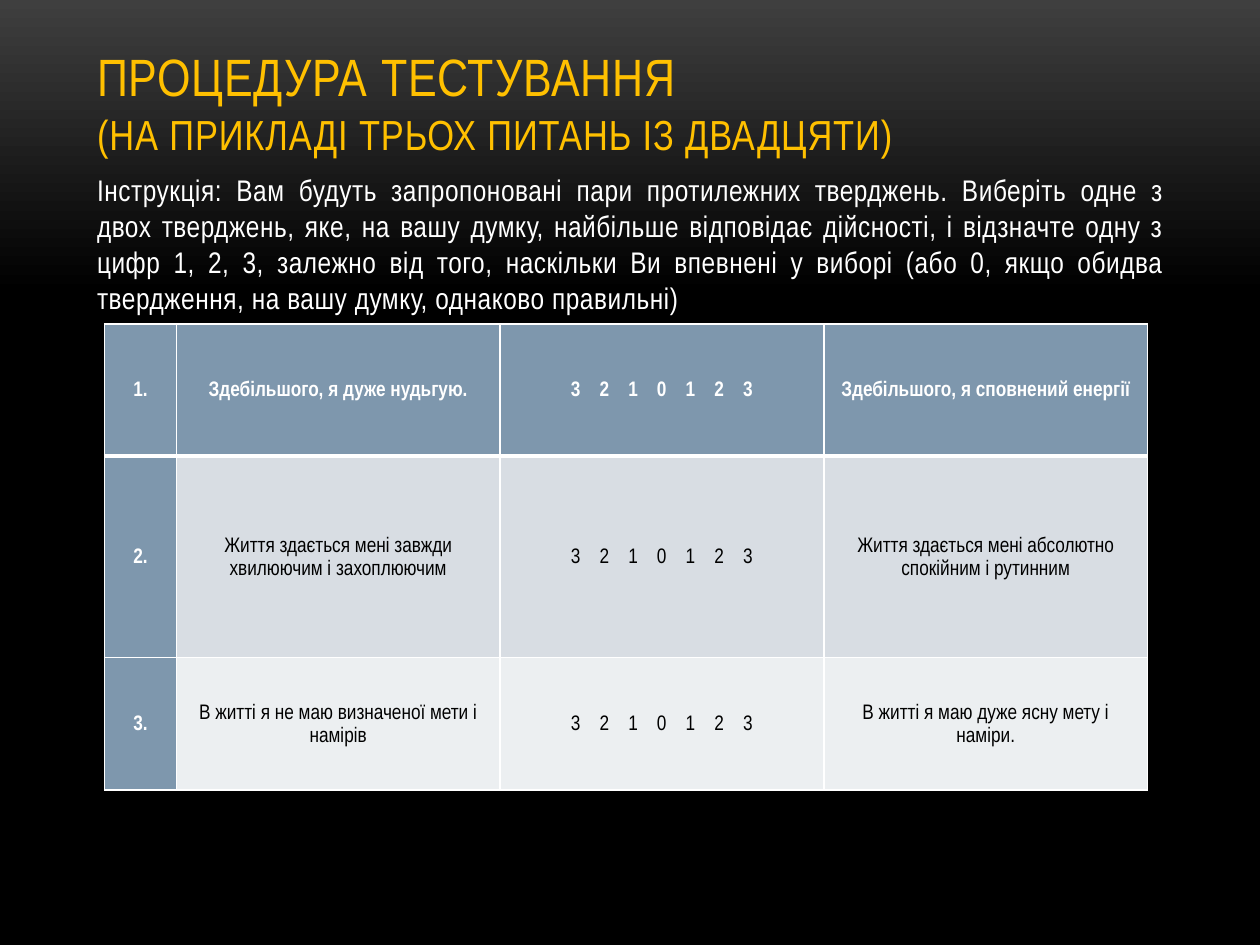
from copy import deepcopy
from dataclasses import dataclass

from lxml.etree import SubElement
from pptx import Presentation
from pptx.dml.color import RGBColor
from pptx.enum.text import MSO_ANCHOR as Anchor, MSO_AUTO_SIZE as AutoSize, PP_ALIGN as Align
from pptx.oxml.ns import qn
from pptx.util import Inches, Pt

GOLD = RGBColor(0xFF, 0xC0, 0x00)
WHITE = RGBColor(0xFF, 0xFF, 0xFF)
BLACK = RGBColor(0x00, 0x00, 0x00)
CHARCOAL = RGBColor(0x3F, 0x3F, 0x3F)
STEEL = RGBColor(0x7E, 0x97, 0xAD)
MIST = RGBColor(0xD8, 0xDD, 0xE3)
PALE = RGBColor(0xEC, 0xEF, 0xF1)

FONT = "Arial Narrow"
SCALE = "3 2 1 0 1 2 3"
SCALE_SPACING = 4.1
NUMBER_WIDTH = 0.57
STATEMENT_WIDTH = 2.57
INSTRUCTION = (
    "Інструкція: Вам будуть запропоновані пари протилежних тверджень. "
    "Виберіть одне з двох тверджень, яке, на вашу думку, найбільше відповідає "
    "дійсності, і відзначте одну з цифр 1, 2, 3, залежно від того, наскільки Ви "
    "впевнені у виборі (або 0, якщо обидва твердження, на вашу думку, однаково правильні)"
)


@dataclass(frozen=True)
class Question:
    number: str
    left: str
    right: str
    height: float
    fill: RGBColor


QUESTIONS = [
    Question("1.", "Здебільшого, я дуже нудьгую.", "Здебільшого, я сповнений енергії", 1.05, STEEL),
    Question("2.", "Життя здається мені завжди хвилюючим і захоплюючим",
             "Життя здається мені абсолютно спокійним і рутинним", 1.6, MIST),
    Question("3.", "В житті я не маю визначеної мети і намірів",
             "В житті я маю дуже ясну мету і наміри.", 1.05, PALE),
]


def apply(target, values: dict) -> None:
    for name, value in values.items():
        setattr(target, name, value)


def add_run(paragraph, text: str, size: float, color: RGBColor,
            bold: bool = False, spacing: float = 0) -> None:
    run = paragraph.add_run()
    run.text = text
    apply(run.font, {"name": FONT, "size": Pt(size), "bold": bold})
    run.font.color.rgb = color
    if spacing:
        run.font._element.set("spc", str(round(spacing * 100)))


def place(placeholder, left: float, top: float, width: float, height: float, anchor: Anchor):
    apply(placeholder, {"left": Inches(left), "top": Inches(top),
                        "width": Inches(width), "height": Inches(height)})
    apply(placeholder.text_frame, {"auto_size": AutoSize.NONE, "word_wrap": True,
                                   "vertical_anchor": anchor})
    return placeholder.text_frame.paragraphs[0]


def paint_background(slide) -> None:
    fill = slide.background.fill
    fill.gradient()
    fill.gradient_angle = 270
    for stop, color, position in zip(fill.gradient_stops, (CHARCOAL, BLACK), (0, 0.31)):
        stop.color.rgb = color
        stop.position = position
    stops = slide.element.find(".//" + qn("a:gsLst"))
    last_stop = deepcopy(stops[-1])
    last_stop.set("pos", "100000")
    stops.append(last_stop)


def add_borders(cell, top: float, bottom: float) -> None:
    properties = cell._tc.get_or_add_tcPr()
    for side, width in {"L": 1, "R": 1, "T": top, "B": bottom}.items():
        line = SubElement(properties, qn(f"a:ln{side}"), w=str(Pt(width)))
        SubElement(SubElement(line, qn("a:solidFill")), qn("a:srgbClr"), val=str(WHITE))


def fill_cell(cell, text: str, fill: RGBColor, top: float, bottom: float) -> None:
    add_borders(cell, top, bottom)
    apply(cell, {"margin_left": Inches(0.07), "margin_right": Inches(0.07),
                 "margin_top": 0, "margin_bottom": 0, "vertical_anchor": Anchor.MIDDLE})
    cell.fill.solid()
    cell.fill.fore_color.rgb = fill
    paragraph = cell.text_frame.paragraphs[0]
    apply(paragraph, {"alignment": Align.CENTER, "line_spacing": 1.15})
    heading = fill == STEEL
    add_run(paragraph, text, 12, WHITE if heading else BLACK, heading,
            SCALE_SPACING if text == SCALE else 0)


def add_questions(slide, questions: list[Question]) -> None:
    widths = [NUMBER_WIDTH] + [STATEMENT_WIDTH] * 3
    table = slide.shapes.add_table(
        len(questions), len(widths), Inches(0.83), Inches(2.57),
        Inches(sum(widths)), Inches(sum(q.height for q in questions))).table
    for column, width in zip(table.columns, widths):
        column.width = Inches(width)
    for index, question in enumerate(questions):
        table.rows[index].height = Inches(question.height)
        top = 3 if index == 1 else 1
        bottom = 3 if index == 0 else 1
        texts = (question.number, question.left, SCALE, question.right)
        for column, text in enumerate(texts):
            fill = question.fill if column else STEEL
            fill_cell(table.cell(index, column), text, fill, top, bottom)


def main() -> None:
    deck = Presentation()
    apply(deck, {"slide_width": Inches(10), "slide_height": Inches(7.5)})
    slide = deck.slides.add_slide(deck.slide_layouts[1])
    paint_background(slide)

    heading = place(slide.shapes.title, 0.67, 0.3, 8.66, 1.01, Anchor.BOTTOM)
    apply(heading, {"alignment": Align.LEFT, "line_spacing": Pt(29.7)})
    add_run(heading, "ПРОЦЕДУРА ТЕСТУВАННЯ", 30, GOLD, spacing=0.5)
    heading.add_line_break()
    add_run(heading, "(НА ПРИКЛАДІ ТРЬОХ ПИТАНЬ ІЗ ДВАДЦЯТИ)", 24, GOLD, spacing=0.5)

    instruction = place(slide.placeholders[1], 0.67, 1.31, 8.67, 4.94, Anchor.TOP)
    properties = instruction._p.get_or_add_pPr()
    properties.set("marL", "0")
    properties.set("indent", "0")
    SubElement(properties, qn("a:buNone"))
    apply(instruction, {"alignment": Align.JUSTIFY, "line_spacing": Pt(20.6),
                        "space_before": Pt(0), "space_after": Pt(6)})
    add_run(instruction, INSTRUCTION, 17, WHITE, spacing=0.3)

    add_questions(slide, QUESTIONS)
    deck.save("out.pptx")


if __name__ == "__main__":
    main()
